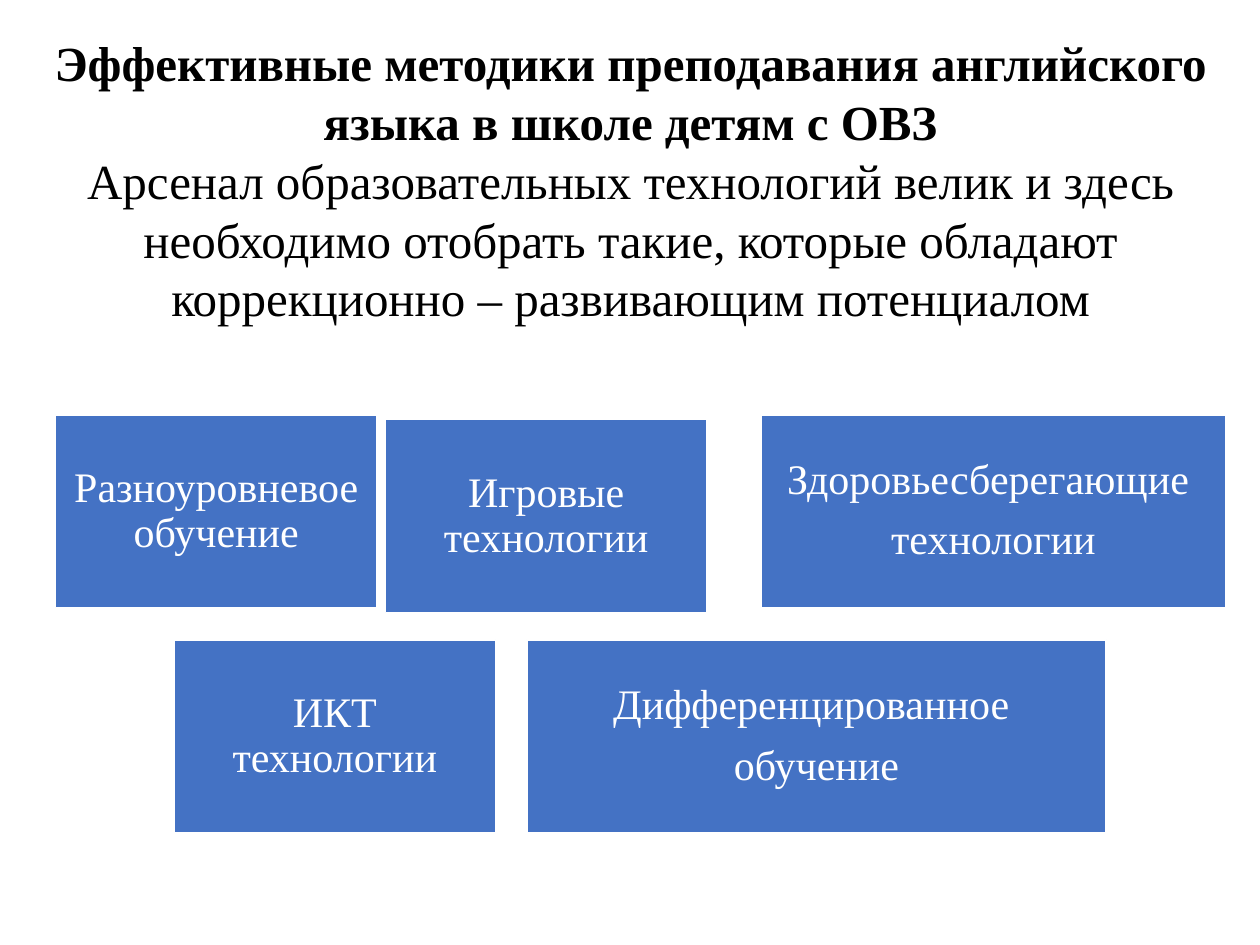
from pptx import Presentation
from pptx.dml.color import RGBColor
from pptx.enum.shapes import MSO_SHAPE
from pptx.enum.text import MSO_ANCHOR, MSO_AUTO_SIZE, PP_ALIGN
from pptx.util import Cm, Pt

RECTANGLE = MSO_SHAPE.RECTANGLE
CENTER = PP_ALIGN.CENTER
TOP, MIDDLE = MSO_ANCHOR.TOP, MSO_ANCHOR.MIDDLE
GROW = MSO_AUTO_SIZE.SHAPE_TO_FIT_TEXT
TITLE_ONLY = 5

FONT = "Times New Roman"
BLACK, WHITE, BLUE = "000000", "FFFFFF", "4472C4"

HEADING = "Эффективные методики преподавания английского языка в школе детям с ОВЗ"
INTRODUCTION = ("Арсенал образовательных технологий велик и здесь необходимо отобрать "
                "такие, которые обладают коррекционно – развивающим потенциалом")

# Box sizes and rows in centimetres
BOX_WIDTH, BOX_HEIGHT = 6.48, 3.89
FIRST_ROW, SECOND_ROW = 8.36, 12.9

# Left, top, width, text
METHODS = [
    (1.12, FIRST_ROW, BOX_WIDTH, "Разноуровневое обучение"),
    (7.77, FIRST_ROW + 0.1, BOX_WIDTH, "Игровые технологии"),
    (15.34, FIRST_ROW, 9.37, "Здоровьесберегающие \nтехнологии"),
    (3.51, SECOND_ROW, BOX_WIDTH, "ИКТ технологии"),
    (10.62, SECOND_ROW, 11.68, "Дифференцированное \nобучение"),
]


def color(value):
    return RGBColor.from_string(value)


def format_paragraph(paragraph, size, text_color, bold=False):
    paragraph.alignment = CENTER
    for run in paragraph.runs:
        run.font.name = FONT
        run.font.size = Pt(size)
        run.font.bold = bold
        run.font.color.rgb = color(text_color)


def set_title(slide):
    title = slide.shapes.title
    title.left, title.top = Cm(0.71), Cm(0.53)
    title.width, title.height = Cm(24), Cm(6.25)
    text_frame = title.text_frame
    text_frame.text = f"{HEADING}\n{INTRODUCTION}"
    text_frame.word_wrap = True
    text_frame.auto_size = GROW
    text_frame.vertical_anchor = TOP
    heading, introduction = text_frame.paragraphs
    format_paragraph(heading, 28, BLACK, bold=True)
    format_paragraph(introduction, 28, BLACK)


def add_method_box(slide, left, top, width, text):
    box = slide.shapes.add_shape(RECTANGLE, Cm(left), Cm(top), Cm(width), Cm(BOX_HEIGHT))
    box.shadow.inherit = False
    box.fill.solid()
    box.fill.fore_color.rgb = color(BLUE)
    box.line.color.rgb = color(WHITE)
    box.line.width = Pt(1)

    text_frame = box.text_frame
    text_frame.text = text
    text_frame.word_wrap = True
    text_frame.vertical_anchor = MIDDLE
    text_frame.margin_left = text_frame.margin_right = Cm(0.25)
    text_frame.margin_top = text_frame.margin_bottom = Cm(0.25)
    for paragraph in text_frame.paragraphs:
        paragraph.line_spacing = 0.9
        paragraph.space_after = Pt(8.4)
        format_paragraph(paragraph, 24, WHITE)


def main():
    presentation = Presentation()
    presentation.slide_width, presentation.slide_height = Cm(25.4), Cm(19.05)
    slide = presentation.slides.add_slide(presentation.slide_layouts[TITLE_ONLY])

    # Heading with its introduction
    set_title(slide)

    # Teaching methods in two rows
    for method in METHODS:
        add_method_box(slide, *method)

    presentation.save("out.pptx")


if __name__ == "__main__":
    main()
